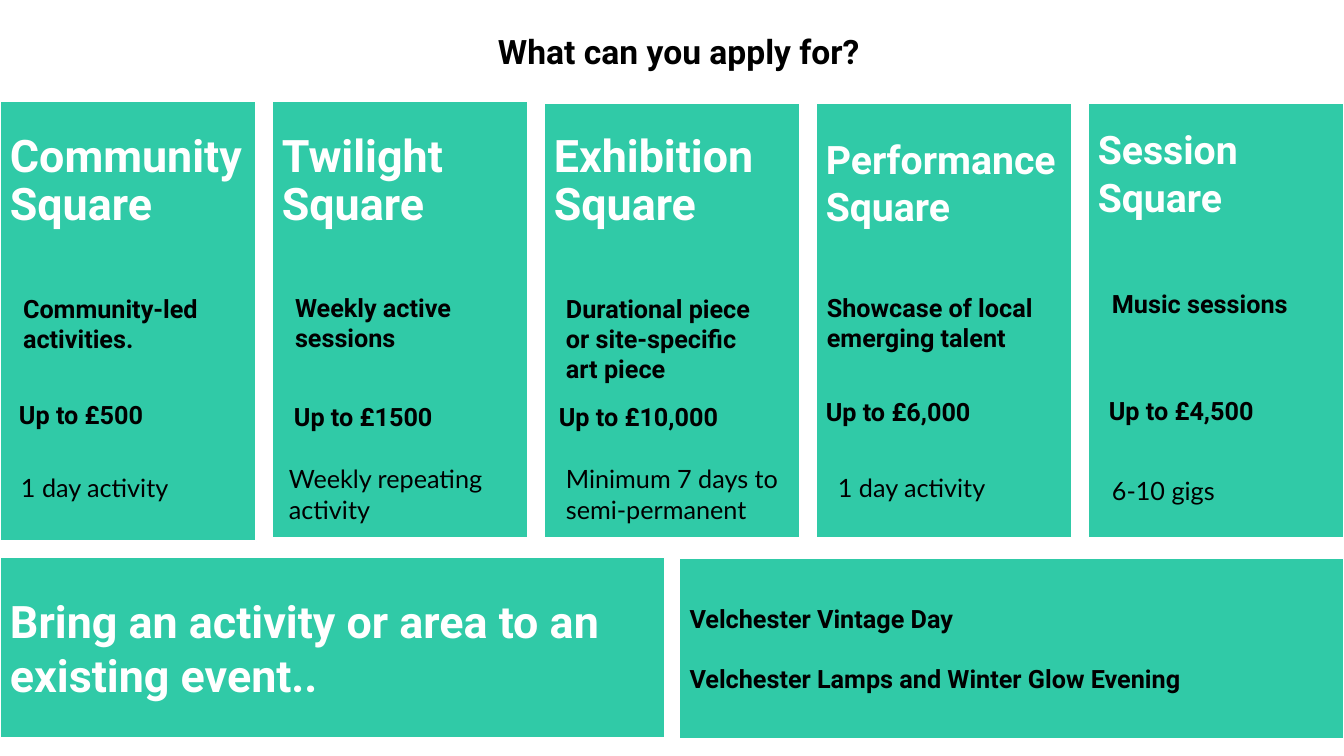
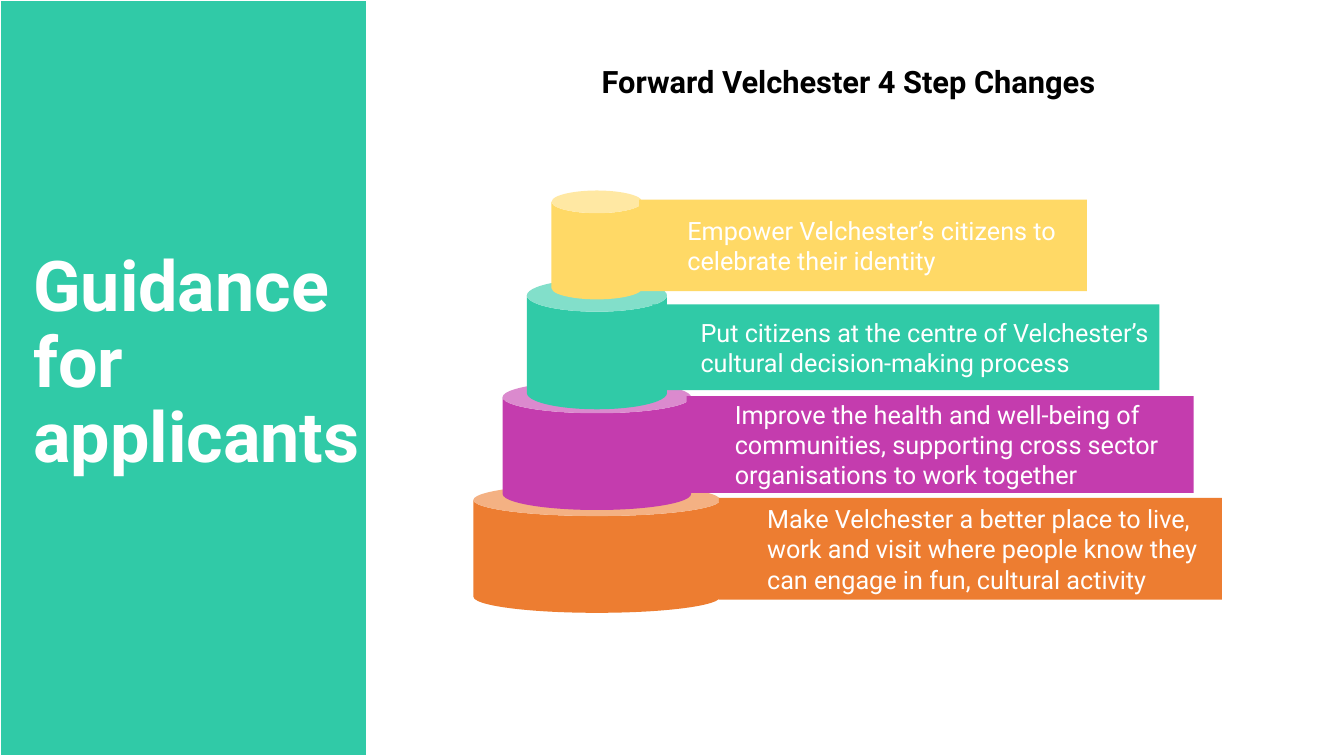
from dataclasses import dataclass

from pptx import Presentation
from pptx.dml.color import RGBColor
from pptx.enum.shapes import MSO_SHAPE as SHAPE
from pptx.enum.text import MSO_ANCHOR as ANCHOR, PP_ALIGN as ALIGN
from pptx.util import Inches, Pt

GREEN = RGBColor(0x30, 0xCA, 0xA7)
ORANGE = RGBColor(0xED, 0x7D, 0x31)
PURPLE = RGBColor(0xC4, 0x3C, 0xAE)
YELLOW = RGBColor(0xFF, 0xD9, 0x66)
WHITE = RGBColor(0xFF, 0xFF, 0xFF)
BLACK = RGBColor(0, 0, 0)

HEAD_FONT = "Roboto"
BODY_FONT = "Lato"

WIDTH, HEIGHT = 13.33, 7.5
COLUMNS = 5
CARD_W = 2.54
PITCH = (WIDTH - CARD_W) / (COLUMNS - 1)
CARD_TOP, CARD_BOTTOM = 1.02, 5.33
TITLE_H = 1.57
HALF_W, HALF_H = 6.59, 1.79
SIDEBAR_W = WIDTH * 0.273
STACK_CENTRE = 5.92


@dataclass
class Square:
    title: str
    about: str
    about_at: tuple
    price: str
    price_at: tuple
    duration: str
    duration_at: tuple
    size: int = 32
    spacing: float = 0.9
    title_shift: float = 0
    top: float = CARD_TOP
    bottom: float = CARD_BOTTOM


@dataclass
class Step:
    text: str
    color: RGBColor
    can: tuple
    bar: tuple


SQUARES = [
    Square("Community Square", "Community-led activities.", (0.13, 2.86),
           "Up to £500", (0.09, 3.91), "1 day activity", (0.11, 4.64),
           top=1.01, bottom=5.37),
    Square("Twilight Square", "Weekly active sessions", (0.13, 2.85),
           "Up to £1500", (0.12, 3.93), "Weekly repeating activity", (0.07, 4.55),
           top=1.01),
    Square("Exhibition Square", "Durational piece or site-specific art piece", (0.12, 2.86),
           "Up to £10,000", (0.05, 3.93), "Minimum 7 days to semi-permanent", (0.12, 4.55)),
    Square("Performance Square", "Showcase of local emerging talent", (0.01, 2.85),
           "Up to £6,000", (0, 3.88), "1 day activity", (0.12, 4.64),
           size=28, spacing=1.0),
    Square("Session Square", "Music sessions", (0.14, 2.81),
           "Up to £4,500", (0.11, 3.87), "6-10 gigs", (0.14, 4.67),
           size=28, spacing=1.0, title_shift=-0.09),
]

STEPS = [
    Step("Make Velchester a better place to live, work and visit where people know "
         "they can engage in fun, cultural activity",
         ORANGE, (4.8, 2.45, 1.28), (7.13, 4.94, 4.99, 1.01)),
    Step("Improve the health and well-being of communities, supporting cross sector "
         "organisations to work together",
         PURPLE, (3.78, 1.87, 1.28), (6.81, 3.93, 5.03, 0.96)),
    Step("Put citizens at the centre of Velchester’s cultural decision-making process",
         GREEN, (2.77, 1.39, 1.29), (6.47, 3.02, 5.03, 0.85)),
    Step("Empower Velchester’s citizens to celebrate their identity",
         YELLOW, (1.89, 0.9, 1.08), (6.34, 1.98, 4.44, 0.91)),
]


def write(sp, text, *, size=18, font=HEAD_FONT, color=BLACK, bold=True, align=ALIGN.LEFT,
          anchor=ANCHOR.TOP, spacing=1.0, after=0, indent=0):
    tf = sp.text_frame
    tf.word_wrap = True
    tf.vertical_anchor = anchor
    lines = text.split("\n")
    for i, line in enumerate(lines):
        p = tf.add_paragraph() if i else tf.paragraphs[0]
        p.alignment = align
        p.line_spacing = spacing
        if i < len(lines) - 1:
            p.space_after = Pt(after)
        if indent:
            p._p.get_or_add_pPr().set("marL", str(Inches(indent)))
        r = p.add_run()
        r.text = line
        r.font.name = font
        r.font.size = Pt(size)
        r.font.bold = bold
        r.font.color.rgb = color


def add_text(s, text, x, y, w, h, **fmt):
    write(s.shapes.add_textbox(Inches(x), Inches(y), Inches(w), Inches(h)), text, **fmt)


def add_block(s, x, y, w, h, color=GREEN, kind=SHAPE.RECTANGLE, outline=True):
    sp = s.shapes.add_shape(kind, Inches(x), Inches(y), Inches(w), Inches(h))
    sp.shadow.inherit = False
    sp.fill.solid()
    sp.fill.fore_color.rgb = color
    if outline:
        sp.line.color.rgb = WHITE
        sp.line.width = Pt(1)
    else:
        sp.line.fill.background()
    return sp


def add_heading(s, text, x, y, w, size):
    add_text(s, text, x, y, w, 0.5, size=size, align=ALIGN.CENTER)


def add_square(s, column, sq):
    x = column * PITCH
    add_block(s, x, sq.top, CARD_W, sq.bottom - sq.top)
    add_text(s, sq.title, x, CARD_TOP + sq.title_shift, PITCH, TITLE_H, size=sq.size,
             color=WHITE, anchor=ANCHOR.MIDDLE, spacing=sq.spacing)
    for text, (dx, y), w, h, fmt in (
        (sq.about, sq.about_at, 2.25, 1.01, {}),
        (sq.price, sq.price_at, 2.4, 0.4, {}),
        (sq.duration, sq.duration_at, 2.5, 0.71, {"font": BODY_FONT, "bold": False}),
    ):
        add_text(s, text, x + dx, y, w, h, **fmt)


def add_step(s, step):
    top, w, h = step.can
    add_block(s, STACK_CENTRE - w / 2, top, w, h, step.color, SHAPE.CAN, outline=False)
    bar = add_block(s, *step.bar, step.color, outline=False)
    write(bar, step.text, color=WHITE, bold=False, anchor=ANCHOR.MIDDLE, indent=0.38)


def build_offers(s):
    add_heading(s, "What can you apply for?", 3.37, 0.26, WIDTH / 2 + 0.06, 24)
    for column, sq in enumerate(SQUARES):
        add_square(s, column, sq)
    write(add_block(s, 0, 5.53, HALF_W, HALF_H),
          "Bring an activity or area to an existing event..",
          size=32, color=WHITE, anchor=ANCHOR.MIDDLE)
    write(add_block(s, WIDTH - HALF_W, 5.54, HALF_W, HALF_H),
          "Velchester Vintage Day\nVelchester Lamps and Winter Glow Evening",
          anchor=ANCHOR.MIDDLE, after=21.4)


def build_guidance(s):
    add_block(s, 0, 0, SIDEBAR_W, HEIGHT)
    add_heading(s, "Forward Velchester 4 Step Changes", 3.87, 0.57, 9.09, 22)
    add_text(s, "Guidance for applicants", 0.23, 0.54, SIDEBAR_W, HEIGHT * 0.82,
             size=50, color=WHITE, anchor=ANCHOR.MIDDLE, spacing=0.9)
    for step in STEPS:
        add_step(s, step)


def main():
    prs = Presentation()
    prs.slide_width, prs.slide_height = Inches(WIDTH), Inches(HEIGHT)
    blank = prs.slide_layouts[6]
    for build in (build_offers, build_guidance):
        build(prs.slides.add_slide(blank))
    prs.save("out.pptx")


if __name__ == "__main__":
    main()
